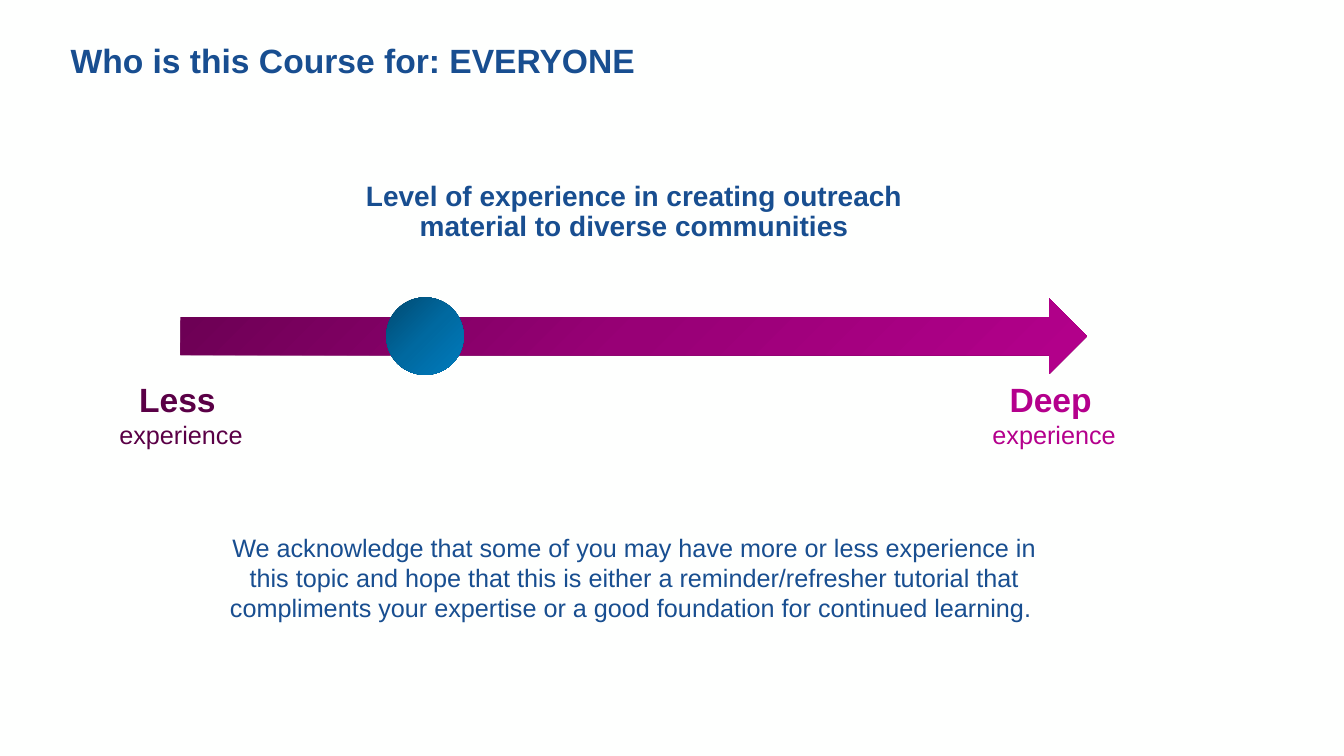
"""Build the slide that shows who the course is for on a scale of experience."""
from copy import deepcopy

from pptx import Presentation
from pptx import util as u
from pptx.dml.color import RGBColor
from pptx.enum import shapes, text
from pptx.oxml.ns import qn

PX = 9144
THEME = {
    "font": "Arial", "bg": "FEFFFE", "blue": "184E90", "less": "5A0046", "deep": "B4008C",
    "arrow": ("6B0053", "980076", "B4008C"), "marker": ("004A71", "0069A0", "007CBE"),
    "large": 24, "medium": 20, "small": 18,
}


def set_font(item, size, color, bold=False):
    f = item.font
    f.name, f.size, f.bold = THEME["font"], u.Pt(THEME[size]), bold
    f.color.rgb = RGBColor.from_string(THEME[color])


def place(sp, *box):
    sp.left, sp.top, sp.width, sp.height = (v * PX for v in box)


prs = Presentation()
prs.slide_width, prs.slide_height = 1333 * PX, 750 * PX
s = prs.slides.add_slide(prs.slide_layouts[1])
s.background.fill.solid()
s.background.fill.fore_color.rgb = RGBColor.from_string(THEME["bg"])

title, body = s.placeholders
for sp, box, words, size, align, anchor in (
    (title, (60, -10, 1150, 145), "Who is this Course for: EVERYONE", "large",
     text.PP_ALIGN.LEFT, text.MSO_ANCHOR.MIDDLE),
    (body, (316, 176, 626, 100),
     "Level of experience in creating\u00a0outreach material to diverse communities", "medium",
     text.PP_ALIGN.CENTER, text.MSO_ANCHOR.TOP),
):
    place(sp, *box)
    tf = sp.text_frame
    tf.text, tf.word_wrap, tf.vertical_anchor = words, True, anchor
    tf.auto_size = text.MSO_AUTO_SIZE.NONE
    p = tf.paragraphs[0]
    p.alignment, p.line_spacing, p.space_before = align, 0.9, u.Pt(0)
    pPr = p._p.get_or_add_pPr()
    pPr.set("marL", "0")
    pPr.set("indent", "0")
    pPr.append(pPr.makeelement(qn("a:buNone"), {}))
    set_font(p, size, "blue", True)

for kind, box, colors in (
    (shapes.MSO_SHAPE.RIGHT_ARROW, (179, 296, 899, 75), "arrow"),
    (shapes.MSO_SHAPE.OVAL, (383, 295, 77, 77), "marker"),
):
    sp = s.shapes.add_shape(kind, *(v * PX for v in box))
    sp.shadow.inherit = False
    sp.line.fill.background()
    sp.fill.gradient()
    sp.fill.gradient_angle = 315
    last = sp._element.spPr.xpath(".//a:gs")[-1]
    last.addnext(deepcopy(last))
    for stop, color, position in zip(sp.fill.gradient_stops, THEME[colors], (0, 0.5, 1)):
        stop.color.rgb = RGBColor.from_string(color)
        stop.position = position

for left, word, color in ((71, "Less", "less"), (937, "Deep", "deep")):
    tf = s.shapes.add_textbox(left * PX, 371 * PX, 217 * PX, 81 * PX).text_frame
    tf.word_wrap = True
    p = tf.paragraphs[0]
    p.alignment = text.PP_ALIGN.CENTER
    for words, size, bold in ((word, "large", True), (" ", "small", False)):
        r = p.add_run()
        r.text = words
        set_font(r, size, color, bold)
    p = tf.add_paragraph()
    p.text, p.alignment = "experience", text.PP_ALIGN.CENTER
    set_font(p, "small", color)

tf = s.shapes.add_textbox(199 * PX, 523 * PX, 860 * PX, 101 * PX).text_frame
tf.word_wrap = True
p = tf.paragraphs[0]
p.text = (
    "We acknowledge that some of you may have more or less experience in this topic and hope "
    "that this is either a reminder/refresher tutorial that compliments your expertise or a "
    "good foundation for continued learning. "
)
p.alignment = text.PP_ALIGN.CENTER
set_font(p, "small", "blue")

prs.save("out.pptx")
